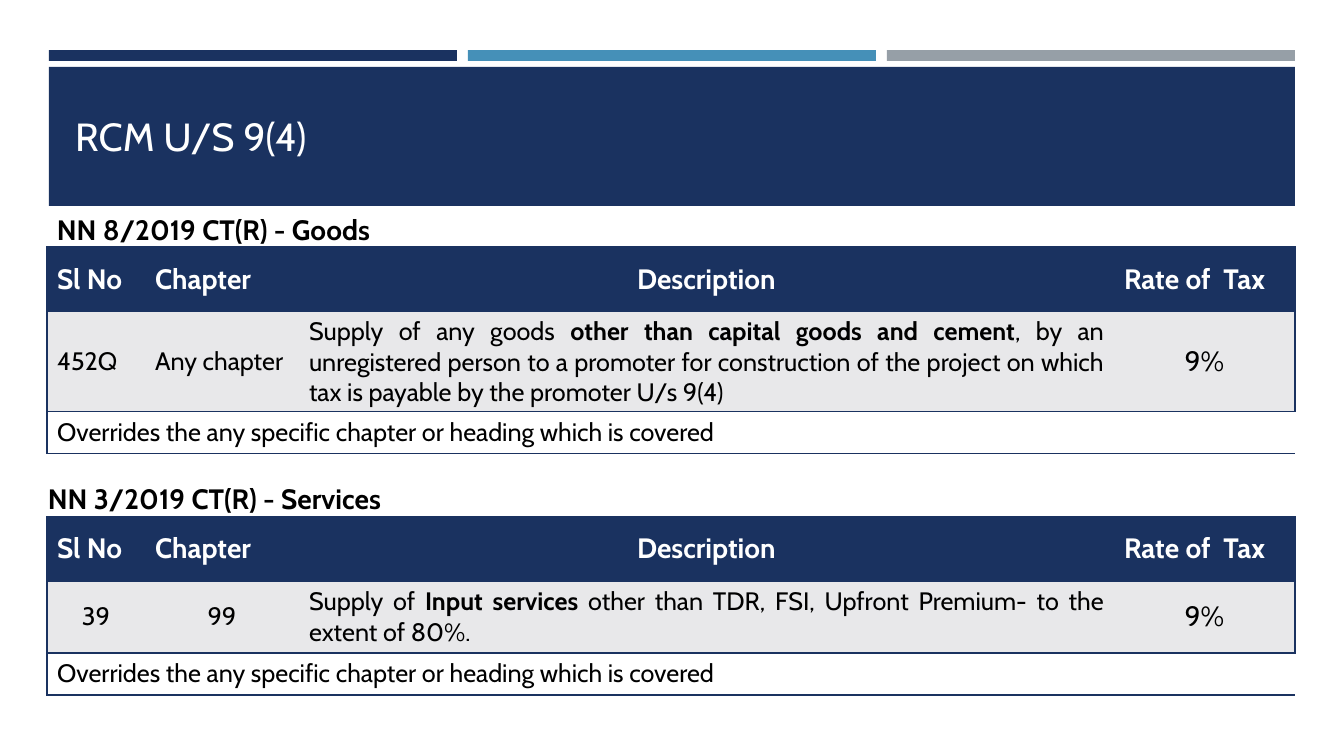
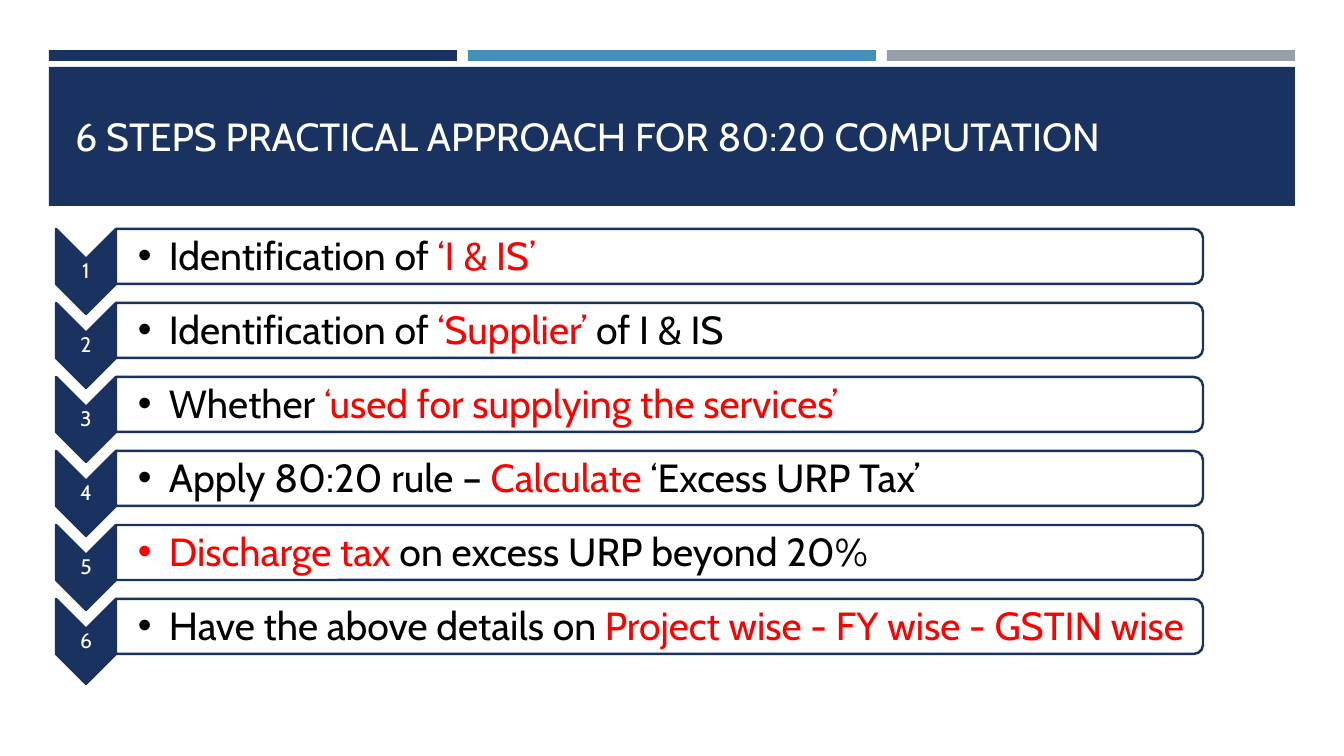
import dataclasses

import lxml.etree
import pptx
import pptx.dml.color
import pptx.enum.shapes
import pptx.enum.text
import pptx.oxml.ns
import pptx.util

PX = 9071  # EMU in one px, at 100.8 px to the inch
ALIGN = pptx.enum.text.PP_ALIGN
MIDDLE = pptx.enum.text.MSO_ANCHOR.MIDDLE
SHAPE = pptx.enum.shapes.MSO_SHAPE
rgb = pptx.dml.color.RGBColor.from_string
qn = pptx.oxml.ns.qn


@dataclasses.dataclass(frozen=True)
class Theme:
    font: str = "Cabin"
    navy: str = "1A3260"
    blue: str = "4590B8"
    grey: str = "969FA7"
    pale: str = "E8E8EA"
    white: str = "FFFFFF"
    black: str = "000000"
    red: str = "FF0000"
    title: int = 28
    heading: int = 20
    cell: int = 18
    number: int = 15


theme = Theme()


def write(paragraph, text, size, color, align=ALIGN.LEFT, bold=False):
    """Write text in one style and return the runs marked *like this*."""
    paragraph.alignment = align
    paragraph.font.name = theme.font
    paragraph.font.size = pptx.util.Pt(size)
    paragraph.font.bold = bold
    paragraph.font.color.rgb = rgb(color)
    marked = []
    for index, part in enumerate(text.split("*")):
        if part:
            run = paragraph.add_run()
            run.text = part
            if index % 2:
                marked.append(run)
    return marked


def add_block(slide, kind, left, top, width, height, fill, line=None, turned=False):
    """Add a plain shape; a turned one covers the same box after a quarter turn."""
    if turned:
        left, top = left + (width - height) / 2, top + (height - width) / 2
        width, height = height, width
    block = slide.shapes.add_shape(
        kind, *[round(length * PX) for length in (left, top, width, height)])
    block.rotation = 90 if turned else 0
    block.shadow.inherit = False
    block.fill.solid()
    block.fill.fore_color.rgb = rgb(fill)
    if line:
        block.line.color.rgb = rgb(line)
        block.line.width = pptx.util.Pt(1.75)
    else:
        block.line.fill.background()
    return block


prs = pptx.Presentation()
prs.slide_width, prs.slide_height = 1344 * PX, 756 * PX
rcm = prs.slides.add_slide(prs.slide_layouts[5])
steps = prs.slides.add_slide(prs.slide_layouts[1])

# Master: three thin bars over the title band
bands = [add_block(rcm, SHAPE.RECTANGLE, 49, 67, 1246, 139, theme.navy)]
for column, color in enumerate((theme.navy, theme.blue, theme.grey)):
    bands.append(add_block(rcm, SHAPE.RECTANGLE, 49 + 419 * column, 50, 408, 11, color))
for band in bands:
    prs.slide_master.shapes.element.insert(2, band.element)

# Titles
for slide, heading in ((rcm, "RCM U/S 9(4)"),
                       (steps, "6 STEPS PRACTICAL APPROACH FOR 80:20 COMPUTATION")):
    title = slide.shapes.title
    title.left, title.top, title.width, title.height = [
        length * PX for length in (65, 81, 1215, 109)]
    title.text_frame.vertical_anchor = MIDDLE
    title.text_frame.auto_size = pptx.enum.text.MSO_AUTO_SIZE.NONE
    write(title.text_frame.paragraphs[0], heading, theme.title, theme.white)

# Slide 1: a heading and a rate table for goods, then for services
COLUMNS = (98, 154, 815, 181)
HEADER = ("Sl No", "Chapter", "Description", "Rate of  Tax")
OVERRIDE = "Overrides the any specific chapter or heading which is covered"
NO_STYLE = "{2D5ABB26-0587-4C30-8999-92F81FD0307C}"
J, C = ALIGN.JUSTIFY, ALIGN.CENTER
notifications = (
    ("NN 8/2019 CT(R) - Goods", 47, 211, 247, (64, 100, 42), (J, J, J, C),
     ("452Q", "Any chapter",
      "Supply of any goods *other than capital goods and cement*, by an unregistered "
      "person to a promoter for construction of the project on which tax is payable "
      "by the promoter U/s 9(4)", "9%")),
    ("NN 3/2019 CT(R) - Services", 38, 480, 517, (64, 72, 42), (C, C, J, C),
     ("39", "99",
      "Supply of *Input services *other than TDR, FSI, Upfront Premium- to the "
      "extent of 80%.", "9%")),
)
for heading, left, heading_top, table_top, heights, entry_aligns, entry in notifications:
    caption = rcm.shapes.add_textbox(left * PX, heading_top * PX, 671 * PX, 42 * PX)
    caption.text_frame.word_wrap = True
    caption_line = caption.text_frame.paragraphs[0]
    caption_line.line_spacing = 0.9
    write(caption_line, heading, theme.heading, theme.black, bold=True)

    rates = rcm.shapes.add_table(3, 4, 47 * PX, table_top * PX,
                                 sum(COLUMNS) * PX, sum(heights) * PX).table
    rates._tbl.tblPr.find(qn("a:tableStyleId")).text = NO_STYLE
    for column, width in zip(rates.columns, COLUMNS):
        column.width = width * PX
    rows = (
        (HEADER, (J, J, C, J), theme.navy, theme.white),
        (entry, entry_aligns, theme.pale, theme.black),
        ((OVERRIDE, "", "", ""), (J, J, J, J), theme.white, theme.black),
    )
    for r, (texts, aligns, fill, color) in enumerate(rows):
        rates.rows[r].height = heights[r] * PX
        for c, text in enumerate(texts):
            cell = rates.cell(r, c)
            cell.vertical_anchor = MIDDLE
            # Outline and row rules
            sides = ["lnL"] * (c == 0) + ["lnR"] * (c == 3) + ["lnT", "lnB"]
            for side in sides:
                border = lxml.etree.SubElement(
                    cell._tc.get_or_add_tcPr(), qn("a:" + side), w="12700")
                paint = lxml.etree.SubElement(border, qn("a:solidFill"))
                lxml.etree.SubElement(paint, qn("a:srgbClr"), val=theme.navy)
            cell.fill.solid()
            cell.fill.fore_color.rgb = rgb(fill)
            if text:
                size = theme.heading if r == 0 or text == "9%" else theme.cell
                for run in write(cell.text_frame.paragraphs[0], text, size, color,
                                 aligns[c], bold=r == 0):
                    run.font.bold = True
    rates.cell(2, 0).merge(rates.cell(2, 3))

# Slide 2: numbered chevrons, each with a bar
STEPS = (
    "Identification of *‘I & IS’*",
    "Identification of *‘Supplier’* of I & IS",
    "Whether *‘used for supplying the services’*",
    "Apply 80:20 rule – *Calculate* ‘Excess URP Tax’",
    "*Discharge tax* on excess URP beyond 20%",
    "Have the above details on *Project wise - FY wise - GSTIN wise*",
)
FIRST_TOP, PITCH = 229, 74
for index in range(len(STEPS)):
    top = FIRST_TOP + PITCH * index
    add_block(steps, SHAPE.CHEVRON, 56, top, 60, 85, theme.navy, theme.navy, turned=True)
    add_block(steps, SHAPE.ROUND_2_SAME_RECTANGLE, 116, top, 1087, 55,
              theme.white, theme.navy, turned=True)
    number = steps.shapes.add_textbox(56 * PX, (top + 30) * PX, 60 * PX, 25 * PX).text_frame
    number.margin_left = number.margin_right = number.margin_top = number.margin_bottom = 0
    number.word_wrap = True
    number.vertical_anchor = MIDDLE
    number.paragraphs[0].line_spacing = 0.9
    write(number.paragraphs[0], str(index + 1), theme.number, theme.white, C)

# Slide 2: the steps as one list, spaced to the bars and drawn over them
LINE = 31  # pt
INDENT = 31 * PX
step_list = steps.placeholders[1]
step_list.left, step_list.top, step_list.width, step_list.height = [
    length * PX for length in (138, 235, 1062, 420)]
steps.shapes.element.append(step_list.element)
frame = step_list.text_frame
frame.margin_left = frame.margin_right = frame.margin_top = frame.margin_bottom = 0
frame.auto_size = pptx.enum.text.MSO_AUTO_SIZE.NONE
for index, text in enumerate(STEPS):
    step = frame.add_paragraph() if index else frame.paragraphs[0]
    step.line_spacing = pptx.util.Pt(LINE)
    step.space_before = 0
    step.space_after = PITCH * PX - pptx.util.Pt(LINE)
    properties = step._p.get_or_add_pPr()
    properties.set("marL", str(INDENT))
    properties.set("indent", str(-INDENT))
    for run in write(step, text, theme.title, theme.black):
        run.font.color.rgb = rgb(theme.red)

prs.save("out.pptx")
